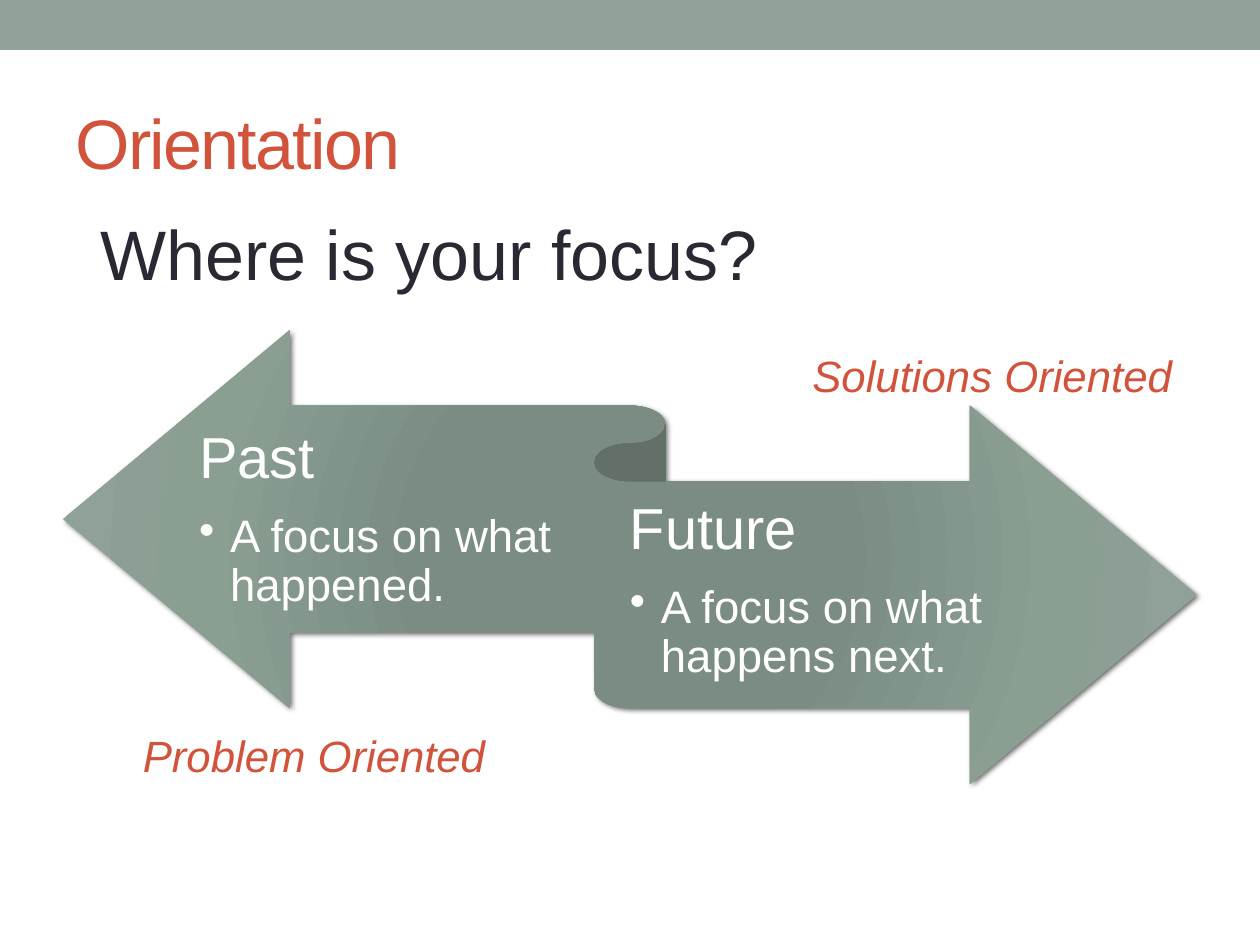
from lxml.etree import SubElement
from pptx import Presentation
from pptx.dml.color import RGBColor
from pptx.enum.shapes import MSO_SHAPE as Shape
from pptx.enum.text import MSO_ANCHOR as Anchor, MSO_AUTO_SIZE as AutoSize, PP_ALIGN as Align
from pptx.oxml import parse_xml
from pptx.oxml.ns import nsdecls, qn
from pptx.util import Emu, Pt

PX = 914400 / 126
FONT = "Arial"
SAGE = RGBColor(0x93, 0xA2, 0x99)
RUST = RGBColor(0xD2, 0x53, 0x3C)
INK = RGBColor(0x29, 0x29, 0x34)
WHITE = RGBColor(0xFF, 0xFF, 0xFF)
RIBBON_STOPS = [(0, "7B8E82"), (34, "7B8D83"), (70, "8A9E92"), (100, "93A299")]


def px(*lengths):
    return [Emu(round(length * PX)) for length in lengths]


def style(para, size, color, italic=False):
    font = para.font
    font.name, font.size, font.italic = FONT, Pt(size), italic
    font.color.rgb = color


def add_bar(page, place):
    bar = page.shapes.add_shape(Shape.RECTANGLE, *px(*place))
    bar.shadow.inherit = False
    bar.fill.solid()
    bar.fill.fore_color.rgb = SAGE
    bar.line.fill.background()


def set_title(page, text, place):
    title = page.shapes.title
    title.left, title.top, title.width, title.height = px(*place)
    frame = title.text_frame
    frame.text = text
    frame.auto_size = AutoSize.NONE
    frame.vertical_anchor = Anchor.MIDDLE
    para = frame.paragraphs[0]
    para.alignment = Align.LEFT
    style(para, 40, RUST)
    # Tighten the letters by one point
    para.runs[0].font._element.set("spc", "-100")


def add_ribbon(page, place):
    ribbon = page.shapes.add_shape(Shape.LEFT_RIGHT_RIBBON, *px(*place))
    ribbon.line.fill.background()
    stops = "".join(
        f'<a:gs pos="{pos * 1000}"><a:srgbClr val="{color}"/></a:gs>'
        for pos, color in RIBBON_STOPS)
    gradient = parse_xml(
        f'<a:gradFill {nsdecls("a")} rotWithShape="1"><a:gsLst>{stops}</a:gsLst>'
        '<a:path path="circle"><a:fillToRect l="100000" t="100000" r="100000" b="100000"/>'
        '</a:path></a:gradFill>')
    shadow = parse_xml(
        f'<a:effectLst {nsdecls("a")}><a:outerShdw blurRad="{Pt(3)}" dist="{Pt(2)}" '
        'dir="2700000" algn="tl" rotWithShape="0"><a:srgbClr val="000000">'
        '<a:alpha val="60000"/></a:srgbClr></a:outerShdw></a:effectLst>')
    properties = ribbon._element.spPr
    properties.find(qn("a:prstGeom")).addnext(gradient)
    properties.find(qn("a:ln")).addnext(shadow)


def add_text(page, place):
    box = page.shapes.add_textbox(*px(*place))
    box.text_frame.word_wrap = True
    return box.text_frame


def add_label(page, text, place, size, color, italic=False, align=Align.LEFT):
    frame = add_text(page, place)
    frame.auto_size = AutoSize.SHAPE_TO_FIT_TEXT
    frame.text = text
    para = frame.paragraphs[0]
    para.alignment = align
    style(para, size, color, italic)


def add_arrow_text(page, heading, point, place):
    frame = add_text(page, place)
    frame.vertical_anchor = Anchor.MIDDLE
    frame.margin_left, frame.margin_top, frame.margin_right, frame.margin_bottom = px(0, 16, 0, 18)
    head = frame.paragraphs[0]
    head.text = heading
    item = frame.add_paragraph()
    item.text = point
    item.level = 1
    for para, size, gap in ((head, 33, 13), (item, 26, 4)):
        para.line_spacing = 0.9
        para.space_after = Pt(gap)
    # Hanging bullet
    indent = px(31)[0]
    properties = item._p.get_or_add_pPr()
    properties.set("marL", str(indent))
    properties.set("indent", str(-indent))
    SubElement(properties, qn("a:buChar"), char="•")
    style(head, 33, WHITE)
    style(item, 26, WHITE)


def main():
    deck = Presentation()
    deck.slide_width, deck.slide_height = px(1260, 945)
    page = deck.slides.add_slide(deck.slide_layouts[5])

    # Header
    add_bar(page, (0, 0, 1260, 50))
    set_title(page, "Orientation", (63, 73, 1134, 136))

    # Two-way ribbon and its texts
    add_ribbon(page, (63, 330, 1134, 454))
    add_arrow_text(page, "Past", "A focus on what happened.", (199, 410, 374, 222))
    add_arrow_text(page, "Future", "A focus on what happens next.", (630, 481, 442, 222))

    # Question and side labels
    add_label(page, "Where is your focus?", (88, 204, 1138, 96), 40, INK)
    add_label(page, "Problem Oriented", (120, 723, 388, 66), 25, RUST, True, Align.CENTER)
    add_label(page, "Solutions Oriented", (800, 343, 388, 66), 25, RUST, True)

    deck.save("out.pptx")


if __name__ == "__main__":
    main()
